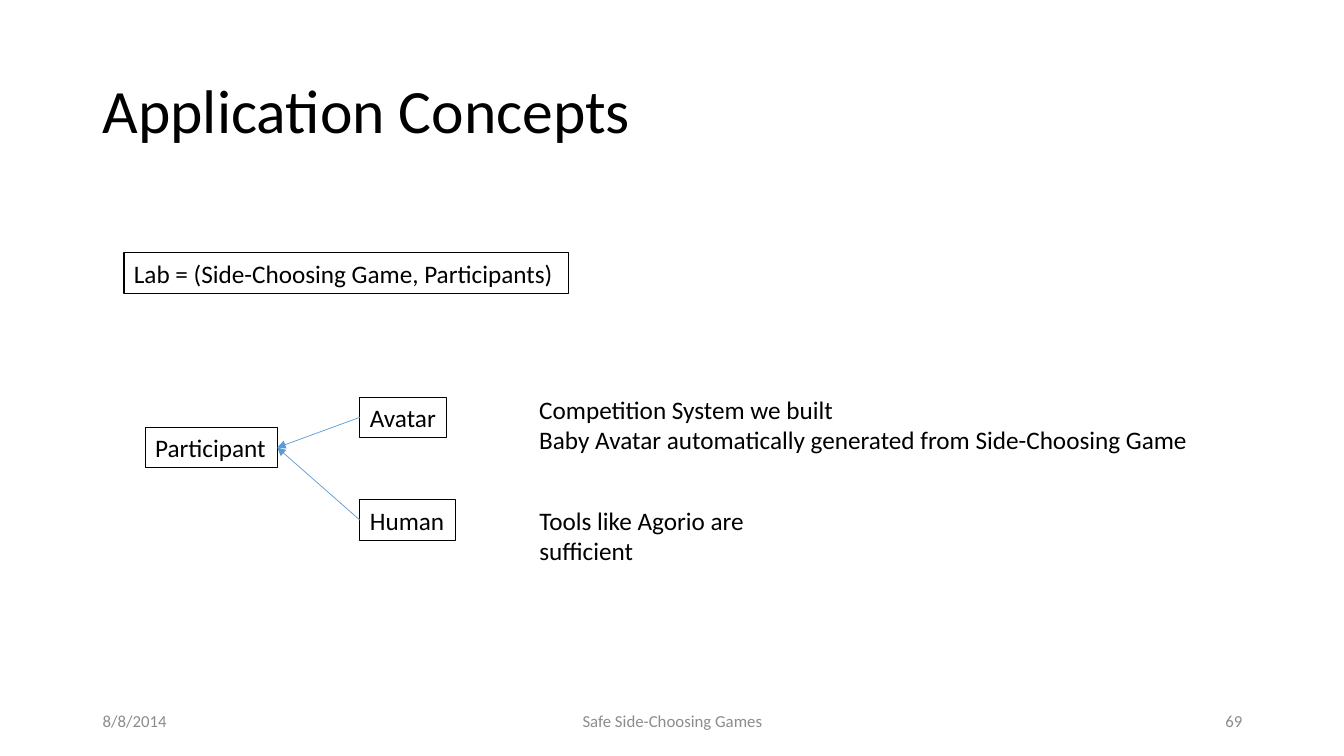
from lxml.etree import SubElement
from pptx import Presentation
from pptx.dml.color import RGBColor
from pptx.enum.shapes import MSO_CONNECTOR, MSO_SHAPE
from pptx.enum.text import MSO_ANCHOR, MSO_AUTO_SIZE, PP_ALIGN
from pptx.oxml.ns import qn
from pptx.util import Inches, Pt

BLACK = RGBColor(0x00, 0x00, 0x00)
GRAY = RGBColor(0x8C, 0x8C, 0x8C)
BLUE = RGBColor(0x5B, 0x9B, 0xD5)

presentation = Presentation()
presentation.slide_width = Inches(13.33)
presentation.slide_height = Inches(7.5)
slide = presentation.slides.add_slide(presentation.slide_layouts[6])


def write_text(shape, lines, size=18, color=BLACK, align=PP_ALIGN.LEFT, **frame_format):
    frame = shape.text_frame
    for name, value in frame_format.items():
        setattr(frame, name, value)
    frame.text = "\n".join(lines)
    font_format = {"name": "Calibri", "size": Pt(size)}
    for paragraph in frame.paragraphs:
        paragraph.alignment = align
        font = paragraph.runs[0].font
        for name, value in font_format.items():
            setattr(font, name, value)
        font.color.rgb = color


fixed_frame = {"word_wrap": True, "vertical_anchor": MSO_ANCHOR.MIDDLE}
fitted_frame = {
    "word_wrap": False,
    "auto_size": MSO_AUTO_SIZE.SHAPE_TO_FIT_TEXT,
    "vertical_anchor": MSO_ANCHOR.TOP,
}

# Title
title = slide.shapes.add_textbox(Inches(0.92), Inches(0.4), Inches(11.5), Inches(1.45))
write_text(title, ["Application Concepts"], size=44, **fixed_frame)
title.text_frame.paragraphs[0].line_spacing = 0.9

# Outlined concept boxes
boxes = {}
for label, left, top, width in [
    ("Lab = (Side-Choosing Game, Participants)", 1.23, 2.51, 4.41),
    ("Participant", 1.44, 4.24, 1.31),
    ("Avatar", 3.57, 3.94, 0.86),
    ("Human", 3.57, 4.96, 0.95),
]:
    box = slide.shapes.add_shape(
        MSO_SHAPE.RECTANGLE, Inches(left), Inches(top), Inches(width), Inches(0.4)
    )
    box.shadow.inherit = False
    box.fill.background()
    box.line.color.rgb = BLACK
    box.line.width = Pt(0.75)
    write_text(box, [label], **fitted_frame)
    boxes[label] = box

# Arrows from each kind of participant
for kind in ("Avatar", "Human"):
    arrow = slide.shapes.add_connector(MSO_CONNECTOR.STRAIGHT, 0, 0, 0, 0)
    arrow.begin_connect(boxes[kind], 1)
    arrow.end_connect(boxes["Participant"], 3)
    arrow.line.color.rgb = BLUE
    arrow.line.width = Pt(0.5)
    SubElement(arrow.line._get_or_add_ln(), qn("a:tailEnd"), type="triangle")
    SubElement(arrow._element.spPr, qn("a:effectLst"))

# Remarks beside the boxes
for lines, top, width, height in [
    (["Tools like Agorio are sufficient"], 4.96, 3.21, 0.4),
    (
        [
            "Competition System we built",
            "Baby Avatar automatically generated from Side-Choosing Game",
        ],
        3.86, 6.7, 0.71,
    ),
]:
    remark = slide.shapes.add_textbox(
        Inches(5.25), Inches(top), Inches(width), Inches(height)
    )
    write_text(remark, lines, **fitted_frame)

# Footer
for text, left, width, align in [
    ("8/8/2014", 0.92, 3, PP_ALIGN.LEFT),
    ("Safe Side-Choosing Games", 4.42, 4.5, PP_ALIGN.CENTER),
    ("69", 9.42, 3, PP_ALIGN.RIGHT),
]:
    footer = slide.shapes.add_textbox(
        Inches(left), Inches(6.95), Inches(width), Inches(0.4)
    )
    write_text(footer, [text], size=12, color=GRAY, align=align, **fixed_frame)

presentation.save("out.pptx")
